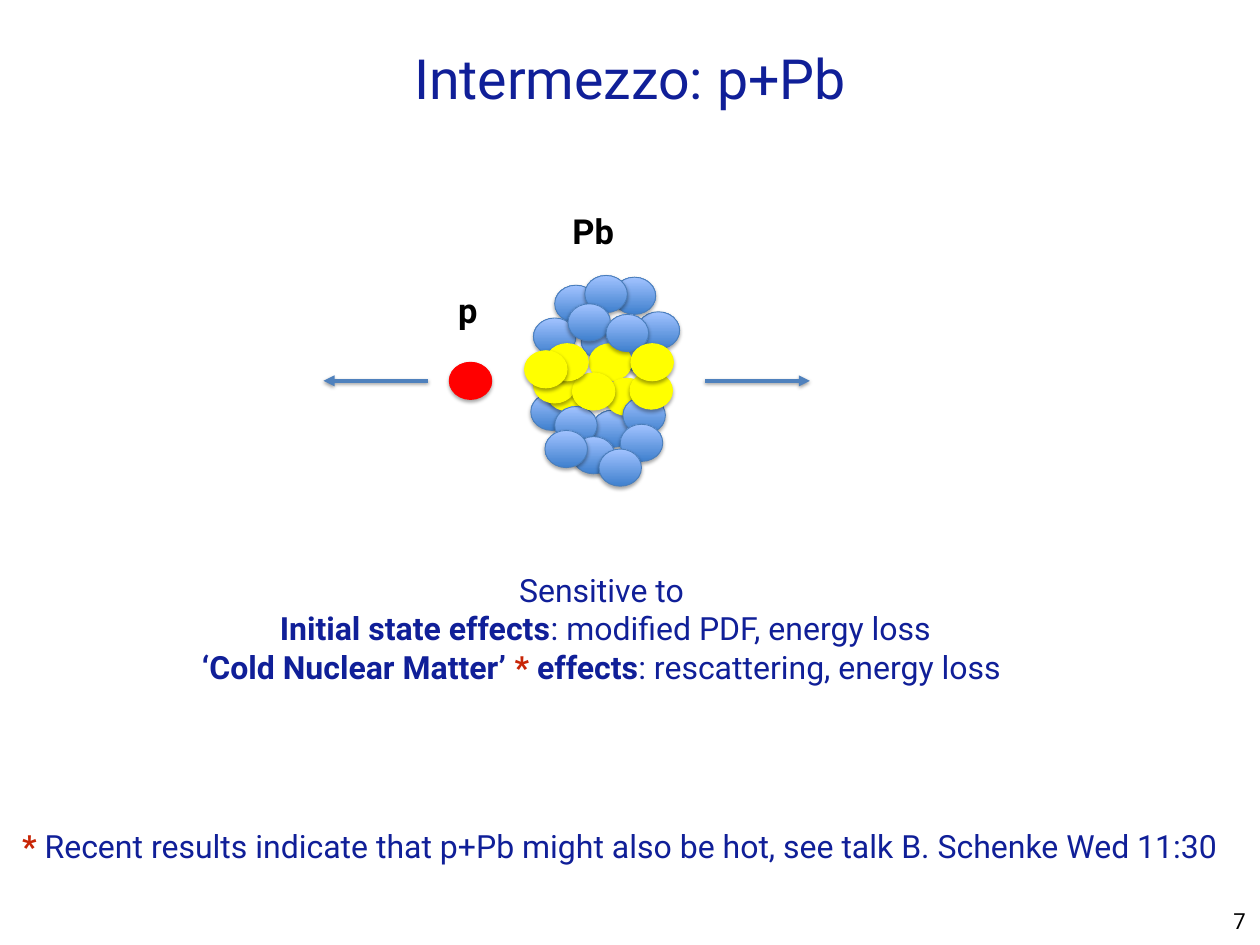
"""Build the p+Pb collision slide: a proton and a lead nucleus moving apart."""
from lxml.etree import SubElement
from pptx import Presentation
from pptx.dml.color import RGBColor
from pptx.enum.shapes import MSO_CONNECTOR, MSO_SHAPE
from pptx.enum.text import MSO_ANCHOR, MSO_AUTO_SIZE, PP_ALIGN
from pptx.oxml.ns import qn
from pptx.util import Pt

PX = 9144
FONT = "Roboto"
COLORS = {
    "navy": "101F98", "black": "000000", "brick": "C82506",
    "yellow": "FFFF00", "red": "FF0000", "arrow": "4F81BD",
    "outline": "4A7EBB", "blue dark": "3F80CE", "blue light": "A2C3FF",
}
RGB = {name: RGBColor.from_string(value) for name, value in COLORS.items()}


def fill_text(shape, place, inset, anchor, align, size, lines):
    shape.left, shape.top, shape.width, shape.height = [n * PX for n in place]
    frame = shape.text_frame
    frame.word_wrap = True
    frame.auto_size = MSO_AUTO_SIZE.NONE
    frame.vertical_anchor = anchor
    frame.margin_left = frame.margin_right = inset * PX
    frame.margin_top = frame.margin_bottom = inset * PX
    for index, line in enumerate(lines):
        para = frame.add_paragraph() if index else frame.paragraphs[0]
        para.alignment = align
        for text, color, bold in line:
            span = para.add_run()
            span.text = text
            span.font.name = FONT
            span.font.size = Pt(size)
            span.font.bold = bold
            span.font.color.rgb = RGB[color]


def add_shadow(effects, distance, opacity):
    shadow = SubElement(effects, qn("a:outerShdw"), blurRad=str(Pt(3)),
                        dist=str(Pt(distance)), dir="5400000", rotWithShape="0")
    tone = SubElement(shadow, qn("a:srgbClr"), val=COLORS["black"])
    SubElement(tone, qn("a:alpha"), val=str(opacity * 1000))


deck = Presentation()
deck.slide_width, deck.slide_height = 1422 * PX, 1067 * PX
page = deck.slides.add_slide(deck.slide_layouts[5])

fill_text(page.shapes.title, (104, 25, 1214, 125), 0, MSO_ANCHOR.MIDDLE,
          PP_ALIGN.CENTER, 45, [[("Intermezzo: p+Pb", "navy", False)]])

effects_lines = [
    [("Sensitive to ", "navy", False)],
    [("Initial state effects", "navy", True),
     (": modified PDF, energy loss", "navy", False)],
    [("‘Cold Nuclear Matter’ ", "navy", True), ("*", "brick", True),
     (" effects", "navy", True),
     (": rescattering, energy loss ", "navy", False)],
]
footnote_lines = [[
    ("*", "brick", True),
    (" Recent results indicate that p+Pb might also be hot, "
     "see talk B. Schenke Wed 11:30", "navy", False),
]]
top, middle = MSO_ANCHOR.TOP, MSO_ANCHOR.MIDDLE
left, center = PP_ALIGN.LEFT, PP_ALIGN.CENTER
text_boxes = [
    ((1386, 1024, 26, 42), 0, top, center, 18, [[("7", "black", False)]]),
    ((210, 639, 947, 140), 6, middle, center, 26, effects_lines),
    ((19, 928, 1383, 54), 6, middle, left, 26, footnote_lines),
    ((641, 232, 91, 73), 5, top, left, 28, [[("Pb", "black", True)]]),
    ((512, 321, 48, 73), 5, top, left, 28, [[("p", "black", True)]]),
]
for settings in text_boxes:
    box = page.shapes.add_textbox(0, 0, PX, PX)
    fill_text(box, *settings)

nucleons = [
    (599, 444, "blue"), (626, 322, "blue"), (668, 463, "blue"),
    (656, 364, "blue"), (602, 359, "blue"), (617, 422, "yellow"),
    (703, 380, "blue"), (665, 388, "yellow"), (683, 427, "yellow"),
    (703, 448, "blue"), (602, 413, "yellow"), (719, 352, "blue"),
    (626, 459, "blue"), (692, 313, "blue"), (660, 311, "blue"),
    (641, 343, "blue"), (684, 355, "blue"), (646, 421, "yellow"),
    (616, 388, "yellow"), (507, 409, "red"), (700, 479, "blue"),
    (646, 493, "blue"), (615, 486, "blue"), (676, 507, "blue"),
    (711, 420, "yellow"), (712, 388, "yellow"), (592, 396, "yellow"),
]
for x, y, color in nucleons:
    nucleon = page.shapes.add_shape(MSO_SHAPE.OVAL, x * PX, y * PX, 48 * PX, 42 * PX)
    nucleon.line.width = Pt(0.75)
    if color == "blue":
        nucleon.fill.gradient()
        nucleon.fill.gradient_angle = 90
        for stop, shade in zip(nucleon.fill.gradient_stops, ("blue dark", "blue light")):
            stop.color.rgb = RGB[shade]
        nucleon.line.color.rgb = RGB["outline"]
    else:
        nucleon.fill.solid()
        nucleon.fill.fore_color.rgb = RGB[color]
        nucleon.line.color.rgb = RGB[color]
    nucleon.shadow.inherit = False
    add_shadow(nucleon._element.spPr.find(qn("a:effectLst")), 1.8, 35)

for start, end in ((796, 914), (483, 365)):
    arrow = page.shapes.add_connector(
        MSO_CONNECTOR.STRAIGHT, start * PX, 430 * PX, end * PX, 430 * PX)
    arrow.line.width = Pt(3)
    arrow.line.color.rgb = RGB["arrow"]
    SubElement(arrow.line._get_or_add_ln(), qn("a:tailEnd"), type="triangle")
    add_shadow(SubElement(arrow._element.spPr, qn("a:effectLst")), 1.6, 38)

deck.save("out.pptx")
